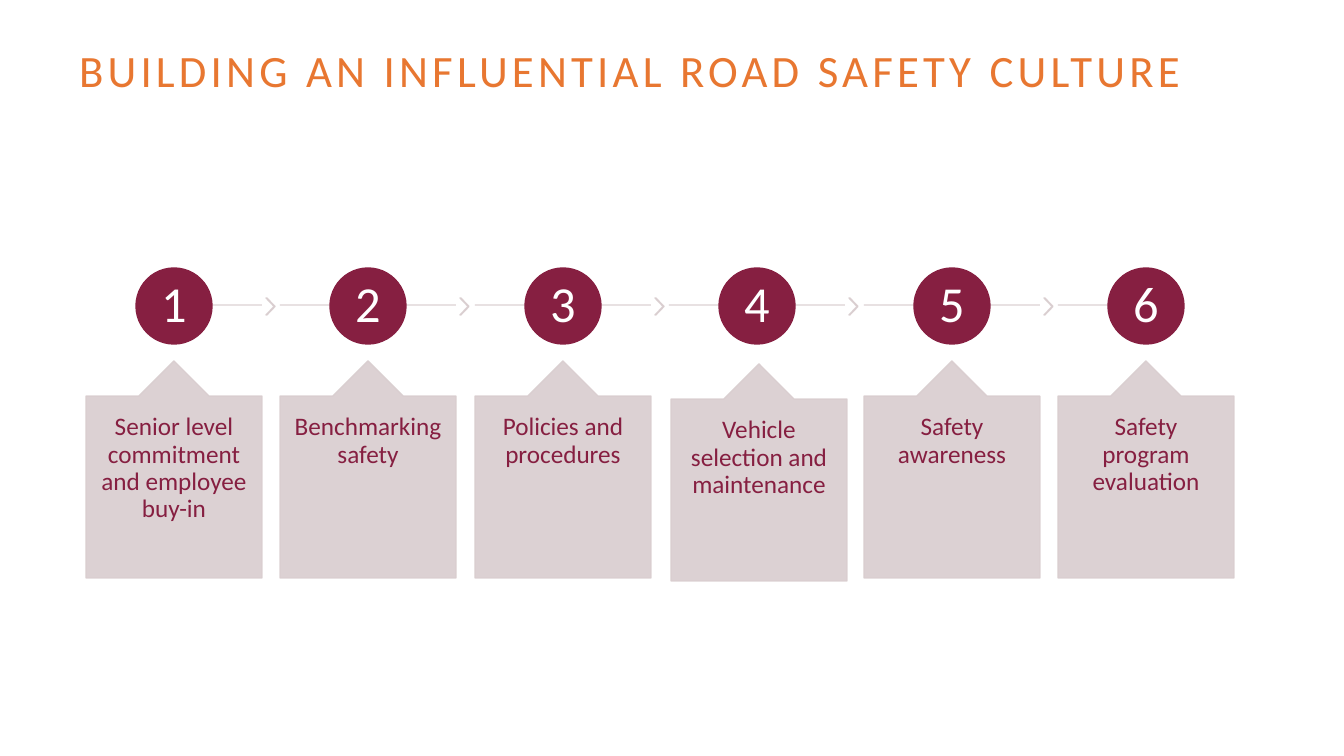
import pptx
import pptx.util
import pptx.dml.color
import pptx.enum.shapes
import pptx.enum.text
import pptx.oxml.ns
import lxml.etree

PX = 9525 / 1.05  # EMU in one px, at 100.8 px to the inch
HUES = {"title": "E87731", "plum": "861F41", "mist": "D9CDCF", "white": "FFFFFF"}
KINDS = pptx.enum.shapes.MSO_SHAPE
ALIGN = pptx.enum.text.PP_ALIGN
ANCHOR = pptx.enum.text.MSO_ANCHOR


def px(*sizes):
    return [round(size * PX) for size in sizes]


class Deck:
    def __init__(self, width, height):
        self.face = "Calibri"
        self.show = pptx.Presentation()
        self.show.slide_width, self.show.slide_height = px(width, height)
        self.slide = self.show.slides.add_slide(self.show.slide_layouts[6])

    def paint(self, fill, hue, alpha):
        fill.solid()
        fill.fore_color.rgb = pptx.dml.color.RGBColor.from_string(HUES[hue])
        if alpha < 100:
            tag = pptx.oxml.ns.qn("a:alpha")
            for color in fill._xPr.iter(pptx.oxml.ns.qn("a:srgbClr")):
                lxml.etree.SubElement(color, tag, val=str(alpha * 1000))

    def label(self, frame, words, size, hue, align, anchor, pads):
        frame.word_wrap = True
        frame.vertical_anchor = anchor
        side, edge = px(*pads)
        frame.margin_left = frame.margin_right = side
        frame.margin_top = frame.margin_bottom = edge
        para = frame.paragraphs[0]
        para.text = words
        para.alignment = align
        para.line_spacing = 0.9
        font = para.font
        font.name = self.face
        font.size = pptx.util.Pt(size)
        font.color.rgb = pptx.dml.color.RGBColor.from_string(HUES[hue])
        return para

    def title(self, words, box):
        frame = self.slide.shapes.add_textbox(*px(*box)).text_frame
        para = self.label(frame, words, 32, "title", ALIGN.LEFT, ANCHOR.TOP, (10, 5))
        para.space_before = pptx.util.Pt(10)
        para.font._rPr.set("spc", "300")

    def shape(self, kind, box, hue, alpha=100, adjust=()):
        shape = self.slide.shapes.add_shape(kind, *px(*box))
        shape.shadow.inherit = False
        for spot, value in enumerate(adjust):
            shape.adjustments[spot] = value
        self.paint(shape.fill, hue, alpha)
        shape.line.width = pptx.util.Pt(1)
        self.paint(shape.line.fill, hue, alpha)
        return shape

    def rule(self, left, right, y, hue, alpha):
        kind = pptx.enum.shapes.MSO_CONNECTOR.STRAIGHT
        line = self.slide.shapes.add_connector(kind, *px(left, y, right, y))
        line.line.width = pptx.util.Pt(1)
        self.paint(line.line.fill, hue, alpha)
        props = line._element.spPr
        lxml.etree.SubElement(props, pptx.oxml.ns.qn("a:effectLst"))

    def badge(self, words, box):
        disc = self.shape(KINDS.OVAL, box, "plum")
        self.label(disc.text_frame, words, 36, "white",
                   ALIGN.CENTER, ANCHOR.MIDDLE, (3, 3))

    def card(self, words, box):
        card = self.shape(KINDS.UP_ARROW_CALLOUT, box, "mist", 90, (0.5, 0.2, 0.2, 1))
        self.label(card.text_frame, words, 18, "plum",
                   ALIGN.CENTER, ANCHOR.TOP, (13, 18))


def main():
    deck = Deck(1344, 756)
    deck.title("BUILDING AN INFLUENTIAL ROAD SAFETY CULTURE", (69, 44, 1169, 110))

    steps = ["Senior level commitment and employee buy-in",
             "Benchmarking safety",
             "Policies and procedures",
             "Vehicle selection and maintenance",
             "Safety awareness",
             "Safety program evaluation"]
    wide, disc, last = 176, 76, len(steps) - 1
    shifts = {3: (2, 3)}  # the fourth card sits slightly off the row

    for step, words in enumerate(steps):
        left = 86 + step * 389 // 2
        mid = left + wide // 2

        # Timeline: open at both ends, with a chevron between steps
        start = mid if step == 0 else left
        end = mid if step == last else left + wide
        deck.rule(start, end, 305, "mist", 90)
        if step < last:
            deck.shape(KINDS.CHEVRON, (left + 180, 298, 9, 17), "mist", 90, (0.9,))

        # Number and card
        deck.badge(str(step + 1), (mid - disc // 2, 268, disc, disc))
        right, down = shifts.get(step, (0, 0))
        deck.card(words, (left + right, 361 + down, wide, 217))

    deck.show.save("out.pptx")


if __name__ == "__main__":
    main()
